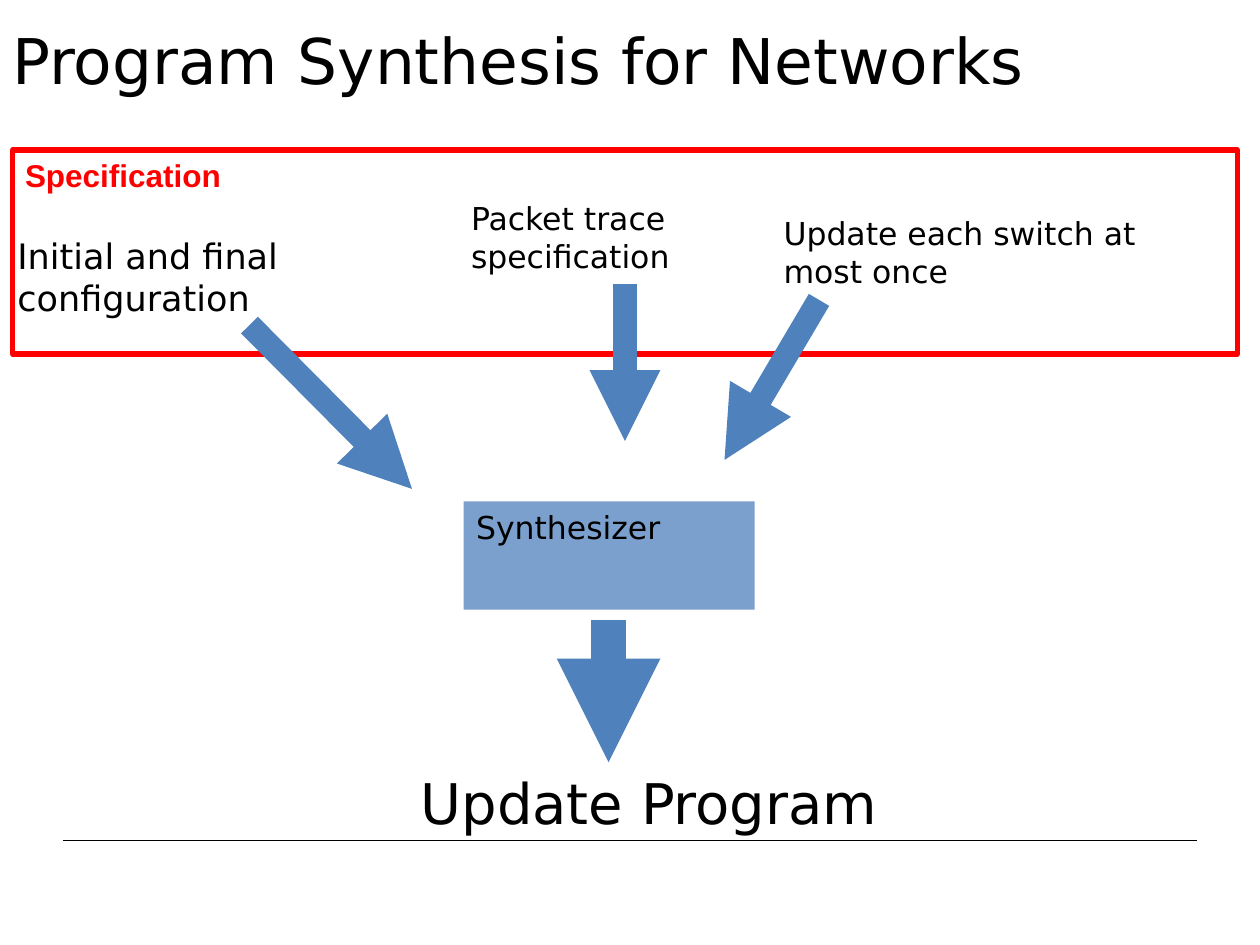
from lxml import etree
from pptx import Presentation
from pptx.dml.color import RGBColor
from pptx.enum.shapes import MSO_CONNECTOR, MSO_SHAPE
from pptx.enum.text import MSO_ANCHOR, PP_ALIGN
from pptx.oxml.ns import qn
from pptx.util import Inches, Pt

BLACK = RGBColor(0x00, 0x00, 0x00)
RED = RGBColor(0xFF, 0x00, 0x00)
BLUE = RGBColor(0x4F, 0x81, 0xBD)
STRAIGHT = MSO_CONNECTOR.STRAIGHT
RECTANGLE = MSO_SHAPE.RECTANGLE
TOP, MIDDLE = MSO_ANCHOR.TOP, MSO_ANCHOR.MIDDLE
LEFT = PP_ALIGN.LEFT
BODY_FONT = "DejaVu Sans"


def write_text(shape, text, size, color=BLACK, font=BODY_FONT, bold=False,
               anchor=TOP):
    frame = shape.text_frame
    frame.word_wrap = True
    frame.vertical_anchor = anchor
    frame.text = text
    paragraph = frame.paragraphs[0]
    paragraph.alignment = LEFT
    run_font = paragraph.runs[0].font
    run_font.name = font
    run_font.size = Pt(size)
    run_font.bold = bold
    run_font.color.rgb = color


def add_label(slide, box, text, size, anchor=TOP):
    label = slide.shapes.add_textbox(*map(Inches, box))
    write_text(label, text, size, anchor=anchor)


def add_box(slide, box):
    """Add a rectangle without fill, outline or shadow."""
    rectangle = slide.shapes.add_shape(RECTANGLE, *map(Inches, box))
    rectangle.shadow.inherit = False
    rectangle.fill.background()
    rectangle.line.fill.background()
    return rectangle


def add_specification_frame(slide):
    frame = add_box(slide, (0.1, 1.19, 9.72, 1.62))
    frame.line.color.rgb = RED
    frame.line.width = Pt(3)
    write_text(frame, "Specification", 18, RED, "Arial", bold=True)


def add_synthesizer(slide):
    synthesizer = add_box(slide, (3.68, 3.98, 2.31, 0.86))
    synthesizer.fill.solid()
    synthesizer.fill.fore_color.rgb = BLUE
    color = synthesizer.fill._xPr.find(".//" + qn("a:srgbClr"))
    etree.SubElement(color, qn("a:alpha"), val="75000")
    write_text(synthesizer, "Synthesizer", 18)


def add_line(slide, start, end, color, width):
    line = slide.shapes.add_connector(STRAIGHT, *map(Inches, start + end))
    line.line.color.rgb = color
    line.line.width = Pt(width)
    etree.SubElement(line._element.spPr, qn("a:effectLst"))
    return line


def add_arrow(slide, start, end, width=13.5):
    arrow = add_line(slide, start, end, BLUE, width)
    etree.SubElement(arrow.line._get_or_add_ln(), qn("a:tailEnd"),
                     type="triangle")


def main():
    presentation = Presentation()
    presentation.slide_width = Inches(10)
    presentation.slide_height = Inches(7.5)
    slide = presentation.slides.add_slide(presentation.slide_layouts[6])

    add_line(slide, (0.5, 6.67), (9.5, 6.67), BLACK, 0.5)
    add_specification_frame(slide)
    add_label(slide, (0, 0, 9, 0.94), "Program Synthesis for Networks", 36,
              MIDDLE)
    add_synthesizer(slide)
    add_arrow(slide, (4.83, 4.92), (4.83, 6.05), width=19.75)

    add_label(slide, (0.04, 1.81, 2.83, 0.77),
              "Initial and final configuration", 20)
    add_label(slide, (3.24, 6.05, 4.5, 0.64), "Update Program", 32)
    add_label(slide, (6.12, 1.65, 3.08, 0.71),
              "Update each switch at most once", 18)
    add_label(slide, (3.64, 1.53, 2.8, 0.71),
              "Packet trace specification", 18)

    add_arrow(slide, (1.98, 2.58), (3.27, 3.88))
    add_arrow(slide, (4.96, 2.25), (4.96, 3.5))
    add_arrow(slide, (6.5, 2.38), (5.75, 3.65))

    presentation.save("out.pptx")


if __name__ == "__main__":
    main()
